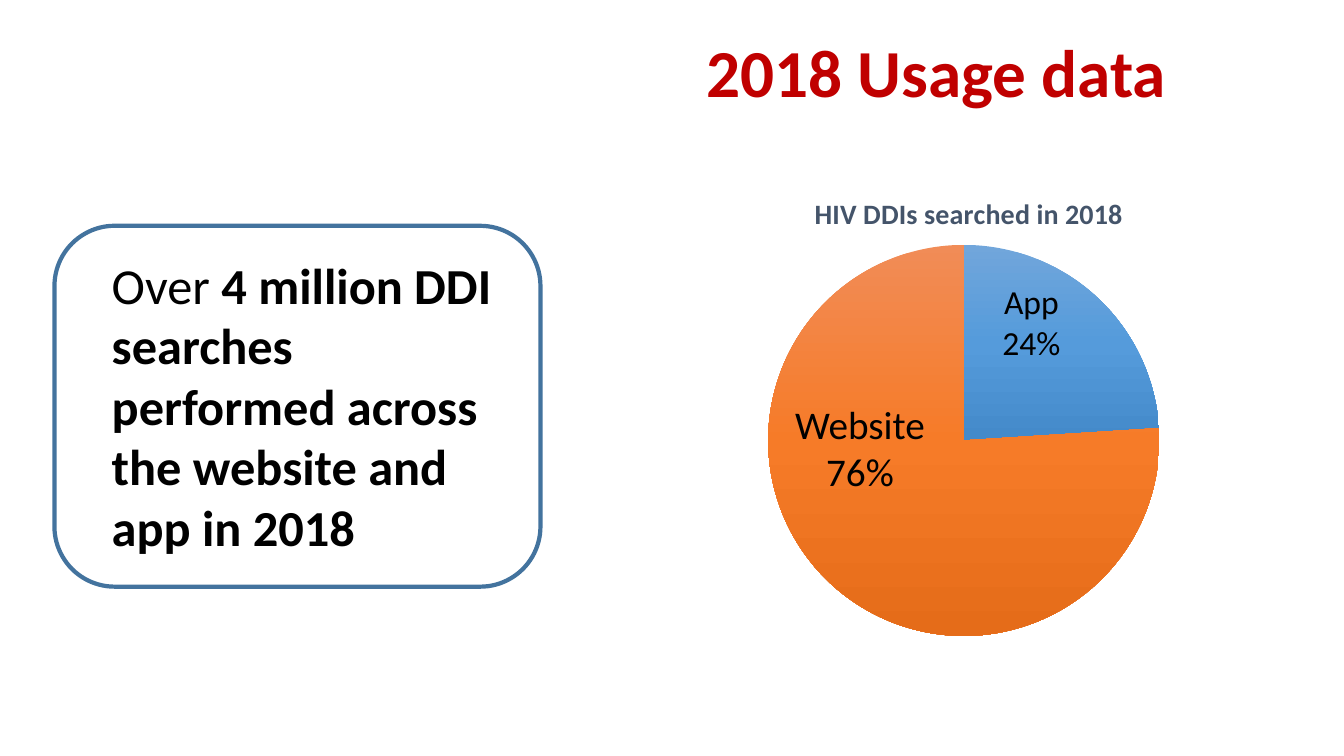
from dataclasses import dataclass

from pptx import Presentation
from pptx.chart.chart import Chart
from pptx.chart.data import CategoryChartData
from pptx.dml.color import RGBColor
from pptx.enum.chart import XL_CHART_TYPE as ChartType
from pptx.enum.shapes import MSO_SHAPE as Preset
from pptx.enum.text import MSO_AUTO_SIZE as AutoSize, PP_ALIGN as Align
from pptx.oxml import parse_xml
from pptx.oxml.ns import nsdecls, qn
from pptx.slide import Slide
from pptx.util import Inches, Pt


@dataclass(frozen=True)
class Theme:
    font: str = "Calibri"
    heading: str = "C00000"
    body: str = "000000"
    chart_title: str = "44546A"
    frame: str = "43739E"
    heading_size: int = 48
    message_size: int = 36
    website_size: int = 28
    app_size: int = 24
    chart_title_size: int = 20
    chart_size: int = 10
    frame_width: int = 3


@dataclass(frozen=True)
class Box:
    left: float
    top: float
    width: float
    height: float

    def emu(self) -> list[Inches]:
        return [Inches(n) for n in (self.left, self.top, self.width, self.height)]


@dataclass(frozen=True)
class Run:
    text: str
    bold: bool = False


@dataclass(frozen=True)
class Caption:
    box: Box
    paragraphs: tuple[tuple[Run, ...], ...]
    size: int
    color: str
    align: Align = Align.LEFT


@dataclass(frozen=True)
class Slice:
    category: str
    share: int
    gradient: tuple[str, str, str]


THEME = Theme()
HEADING = Caption(Box(6.91, 0.25, 5.1, 0.91), ((Run("2018 Usage data", True),),),
                  THEME.heading_size, THEME.heading)
MESSAGE = Caption(
    Box(1.01, 2.47, 4.11, 3.13),
    ((Run("Over "), Run("4 million DDI searches", True)),
     (Run("performed across the website and app in 2018", True),)),
    THEME.message_size, THEME.body)
SLICE_LABELS = (
    Caption(Box(7.75, 3.92, 1.56, 1.04), ((Run("Website 76%"),),),
            THEME.website_size, THEME.body, Align.CENTER),
    Caption(Box(9.66, 2.74, 1.14, 0.91), ((Run("App 24%"),),),
            THEME.app_size, THEME.body, Align.CENTER),
)
MESSAGE_FRAME = Box(0.54, 2.24, 4.82, 3.58)
CHART_BOX = Box(5.83, 1.63, 7.46, 4.81)
PIE_BOX = Box(7.62, 2.43, 3.88, 3.88)
CHART_TITLE_BOX = Box(8.03, 1.87, 3.05, 0.34)
SLICES = (
    Slice("1", 24, ("71A6DB", "559BDB", "448ACA")),
    Slice("2", 76, ("F18C57", "F67B28", "E56C19")),
)


def style_font(font, size: int, color: str, bold: bool = False) -> None:
    font.name = THEME.font
    font.size = Pt(size)
    font.bold = bold
    font.color.rgb = RGBColor.from_string(color)


def add_caption(slide: Slide, caption: Caption) -> None:
    frame = slide.shapes.add_textbox(*caption.box.emu()).text_frame
    frame.word_wrap = True
    frame.auto_size = AutoSize.SHAPE_TO_FIT_TEXT
    for index, runs in enumerate(caption.paragraphs):
        paragraph = frame.add_paragraph() if index else frame.paragraphs[0]
        paragraph.alignment = caption.align
        for part in runs:
            run = paragraph.add_run()
            run.text = part.text
            style_font(run.font, caption.size, caption.color, part.bold)


def add_message_frame(slide: Slide) -> None:
    frame = slide.shapes.add_shape(Preset.ROUNDED_RECTANGLE, *MESSAGE_FRAME.emu())
    frame.shadow.inherit = False
    frame.fill.background()
    frame.line.color.rgb = RGBColor.from_string(THEME.frame)
    frame.line.width = Pt(THEME.frame_width)


def place_in_chart(element, box: Box, index: int, inner: bool) -> None:
    """Fix a chart part at a slide position, given as fractions of the chart."""
    for old in element.findall(qn("c:layout")):
        element.remove(old)
    x = (box.left - CHART_BOX.left) / CHART_BOX.width
    y = (box.top - CHART_BOX.top) / CHART_BOX.height
    settings = [("xMode", "edge"), ("yMode", "edge"), ("x", f"{x:.4f}"), ("y", f"{y:.4f}")]
    if inner:
        settings.insert(0, ("layoutTarget", "inner"))
        settings += [("w", f"{box.width / CHART_BOX.width:.4f}"),
                     ("h", f"{box.height / CHART_BOX.height:.4f}")]
    values = "".join(f'<c:{tag} val="{value}"/>' for tag, value in settings)
    element.insert(index, parse_xml(
        f'<c:layout {nsdecls("c")}><c:manualLayout>{values}</c:manualLayout></c:layout>'))


def fill_slice(point, colors: tuple[str, str, str]) -> None:
    """Fill a slice with a gradient running from top to bottom."""
    point.format.line.fill.background()
    stops = "".join(f'<a:gs pos="{index * 50000}"><a:srgbClr val="{color}"/></a:gs>'
                    for index, color in enumerate(colors))
    properties = point.format.line._get_or_add_ln().getparent()
    properties.insert(0, parse_xml(
        f'<a:gradFill {nsdecls("a")} rotWithShape="1"><a:gsLst>{stops}</a:gsLst>'
        '<a:lin ang="5400000" scaled="0"/></a:gradFill>'))


def add_chart_title(chart: Chart) -> None:
    title = chart.chart_title
    run = title.text_frame.paragraphs[0].add_run()
    run.text = "HIV DDIs searched in 2018"
    style_font(run.font, THEME.chart_title_size, THEME.chart_title, bold=True)
    title.include_in_layout = False
    place_in_chart(title._element, CHART_TITLE_BOX, 1, inner=False)


def add_usage_chart(slide: Slide) -> None:
    usage = CategoryChartData()
    usage.categories = [part.category for part in SLICES]
    usage.add_series("Series 1", [part.share for part in SLICES])
    chart = slide.shapes.add_chart(ChartType.PIE, *CHART_BOX.emu(), usage).chart
    chart.has_legend = False
    style_font(chart.font, THEME.chart_size, THEME.body)
    add_chart_title(chart)
    plot = chart.plots[0]
    plot.vary_by_categories = True
    for index, part in enumerate(SLICES):
        fill_slice(plot.series[0].points[index], part.gradient)
    place_in_chart(chart._chartSpace.chart.plotArea, PIE_BOX, 0, inner=True)


def main() -> None:
    deck = Presentation()
    deck.slide_width, deck.slide_height = Inches(13.33), Inches(7.5)
    slide = deck.slides.add_slide(deck.slide_layouts[6])
    add_caption(slide, HEADING)
    add_caption(slide, MESSAGE)
    add_message_frame(slide)
    add_usage_chart(slide)
    for label in SLICE_LABELS:
        add_caption(slide, label)
    deck.save("out.pptx")


if __name__ == "__main__":
    main()
